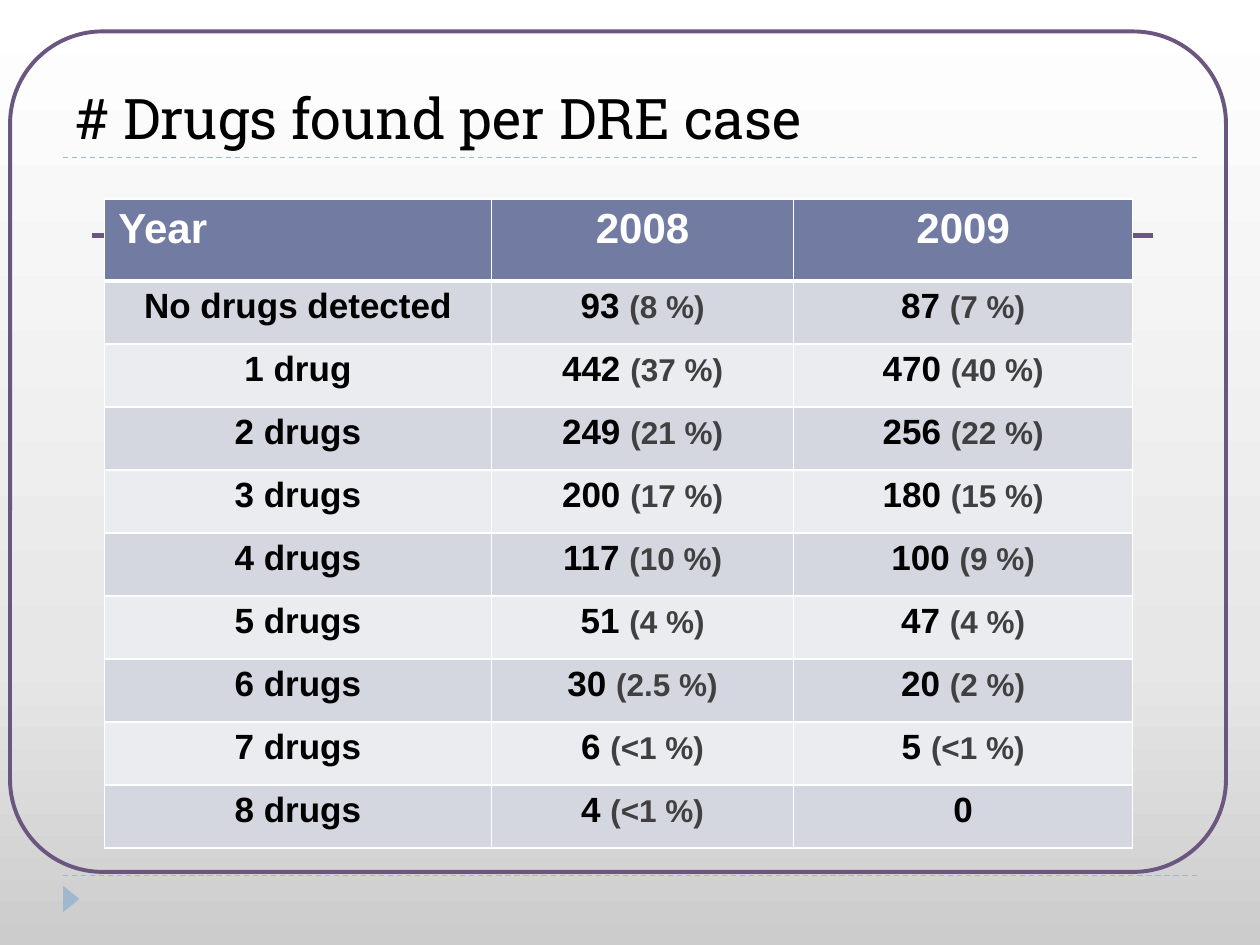
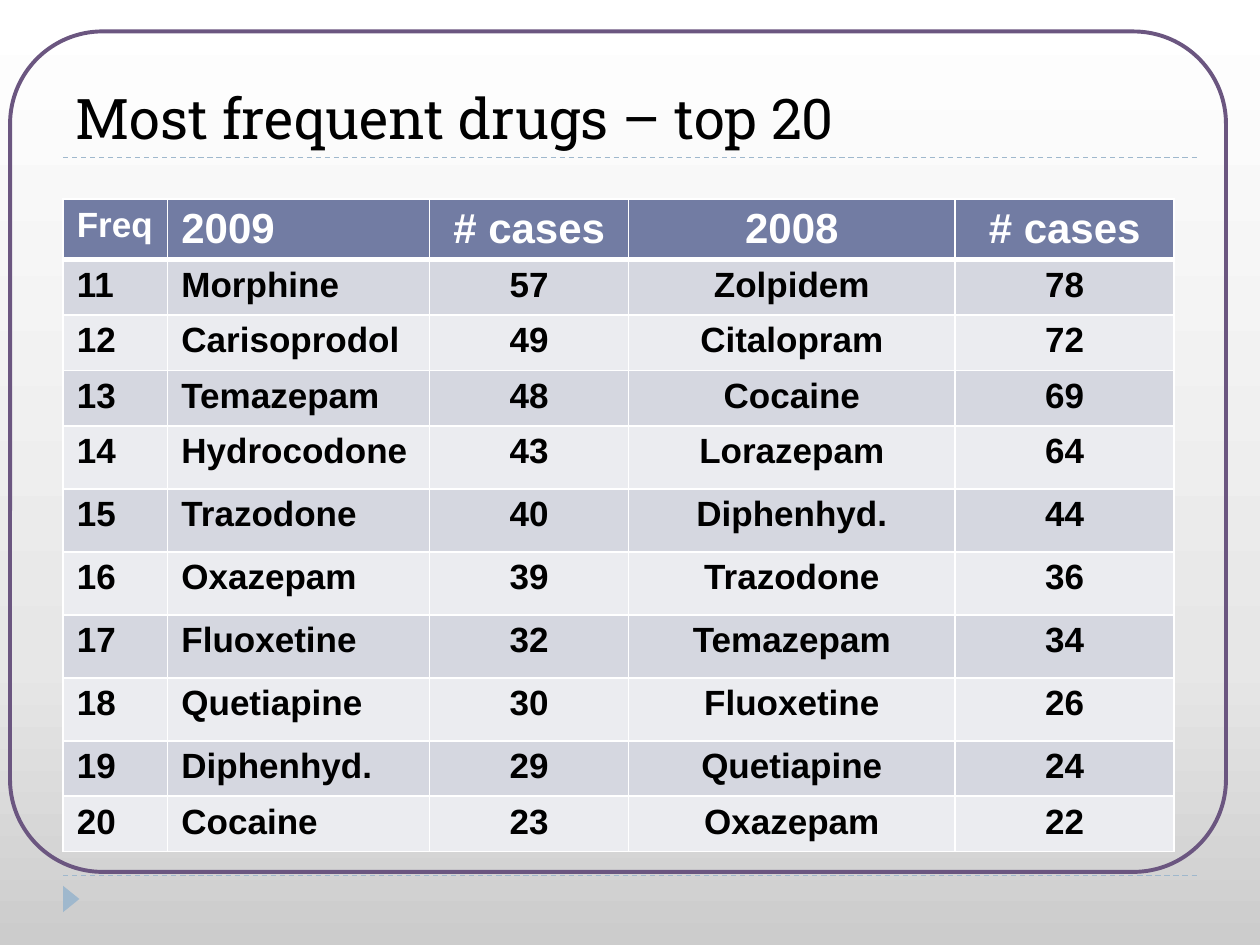
from dataclasses import dataclass

from lxml.etree import SubElement
from pptx import Presentation
from pptx.dml.color import RGBColor
from pptx.enum.dml import MSO_LINE
from pptx.enum.shapes import MSO_CONNECTOR, MSO_SHAPE
from pptx.enum.text import MSO_ANCHOR, PP_ALIGN
from pptx.oxml.ns import qn
from pptx.util import Inches, Pt


@dataclass(frozen=True)
class Theme:
    backdrop: tuple = ((0, "CCCCCC"), (30, "E7E7E7"), (100, "FFFFFF"))
    rule: str = "9FB8CD"
    frame: str = "6B5680"
    header: str = "727CA3"
    bands: tuple = ("D5D7E0", "EBECF0")
    white: str = "FFFFFF"
    text: str = "000000"
    muted: str = "404040"
    title_font: str = "Roboto Slab"
    body_font: str = "Arial"
    title_size: int = 32
    header_size: int = 24
    body_size: int = 20
    percent_size: int = 18


THEME = Theme()

DRUGS_PER_CASE = [
    ("Year", "2008", "2009"),
    ("No drugs detected", "93 (8 %)", "87 (7 %)"),
    ("1 drug", "442 (37 %)", "470 (40 %)"),
    ("2 drugs", "249 (21 %)", "256 (22 %)"),
    ("3 drugs", "200 (17 %)", "180 (15 %)"),
    ("4 drugs", "117 (10 %)", "100 (9 %)"),
    ("5 drugs", "51 (4 %)", "47 (4 %)"),
    ("6 drugs", "30 (2.5 %)", "20 (2 %)"),
    ("7 drugs", "6 (<1 %)", "5 (<1 %)"),
    ("8 drugs", "4 (<1 %)", "0"),
]

FREQUENT_DRUGS = [
    ("Freq", "2009", "# cases", "2008", "# cases"),
    ("11", "Morphine", "57", "Zolpidem", "78"),
    ("12", "Carisoprodol", "49", "Citalopram", "72"),
    ("13", "Temazepam", "48", "Cocaine", "69"),
    ("14", "Hydrocodone", "43", "Lorazepam", "64"),
    ("15", "Trazodone", "40", "Diphenhyd.", "44"),
    ("16", "Oxazepam", "39", "Trazodone", "36"),
    ("17", "Fluoxetine", "32", "Temazepam", "34"),
    ("18", "Quetiapine", "30", "Fluoxetine", "26"),
    ("19", "Diphenhyd.", "29", "Quetiapine", "24"),
    ("20", "Cocaine", "23", "Oxazepam", "22"),
]


def rgb(color):
    return RGBColor.from_string(color)


def style_run(r, font, size, color, bold=False):
    r.font.name = font
    r.font.size = Pt(size)
    r.font.bold = bold
    r.font.color.rgb = rgb(color)


def set_backdrop(master):
    """Give every slide the gradient that runs from grey below to white above."""
    fill = master.background.fill
    fill.gradient()
    fill.gradient_angle = 90
    stops = master.element.find(".//" + qn("a:gsLst"))
    stops.clear()
    for position, color in THEME.backdrop:
        stop = SubElement(stops, qn("a:gs"), pos=str(position * 1000))
        SubElement(stop, qn("a:srgbClr"), val=color)


def add_rule(slide, left, right, y, color, width, dash=None):
    line = slide.shapes.add_connector(
        MSO_CONNECTOR.STRAIGHT, Inches(left), Inches(y), Inches(right), Inches(y))
    line.line.color.rgb = rgb(color)
    line.line.width = Pt(width)
    line.line.dash_style = dash
    SubElement(line.element.spPr, qn("a:effectLst"))


def add_shape(slide, kind, left, top, width, height):
    sp = slide.shapes.add_shape(
        kind, Inches(left), Inches(top), Inches(width), Inches(height))
    sp.shadow.inherit = False
    return sp


def add_decoration(slide):
    for y in (6.95, 1.25):
        add_rule(slide, 0.5, 9.5, y, THEME.rule, 0.75, MSO_LINE.DASH)

    marker = add_shape(slide, MSO_SHAPE.ISOSCELES_TRIANGLE, 0.46, 7.07, 0.21, 0.13)
    marker.rotation = 90
    marker.fill.solid()
    marker.fill.fore_color.rgb = rgb(THEME.rule)
    marker.line.fill.background()

    frame = add_shape(slide, MSO_SHAPE.ROUNDED_RECTANGLE, 0.08, 0.25, 9.65, 6.67)
    frame.adjustments[0] = 0.11
    frame.fill.background()
    frame.line.color.rgb = rgb(THEME.frame)
    frame.line.width = Pt(2.25)
    add_rule(slide, 0.73, 9.15, 1.87, THEME.frame, 3)


def set_title(slide, text):
    title = slide.shapes.title
    title.left, title.top = Inches(0.5), Inches(0.17)
    title.width, title.height = Inches(9), Inches(1.08)
    tf = title.text_frame
    tf.text = text
    tf.vertical_anchor = MSO_ANCHOR.BOTTOM
    p = tf.paragraphs[0]
    p.alignment = PP_ALIGN.LEFT
    style_run(p.runs[0], THEME.title_font, THEME.title_size, THEME.text)


def add_slide(prs, title):
    slide = prs.slides.add_slide(prs.slide_layouts.get_by_name("Title Only"))
    add_decoration(slide)
    set_title(slide, title)
    return slide


def set_borders(cell, top, bottom):
    """Draw white borders; they must come before the fill in the cell's XML."""
    tc_pr = cell._tc.get_or_add_tcPr()
    widths = {"a:lnL": 1, "a:lnR": 1, "a:lnT": top, "a:lnB": bottom}
    for i, (tag, width) in enumerate(widths.items()):
        ln = SubElement(tc_pr, qn(tag), w=str(Pt(width)))
        fill = SubElement(ln, qn("a:solidFill"))
        SubElement(fill, qn("a:srgbClr"), val=THEME.white)
        tc_pr.insert(i, ln)


def fill_cell(cell, text, size, color, fill, left_aligned):
    """Write a bold value; a share in parentheses is smaller and muted."""
    cell.margin_left = cell.margin_right = Inches(0.11)
    cell.margin_top = cell.margin_bottom = Inches(0.05)
    cell.fill.solid()
    cell.fill.fore_color.rgb = rgb(fill)
    value, paren, share = text.partition("(")
    p = cell.text_frame.paragraphs[0]
    p.text = value
    p.alignment = PP_ALIGN.LEFT if left_aligned else PP_ALIGN.CENTER
    style_run(p.runs[0], THEME.body_font, size, color, bold=True)
    if paren:
        r = p.add_run()
        r.text = paren + share
        style_run(r, THEME.body_font, THEME.percent_size, THEME.muted, bold=True)


def add_data_table(slide, rows, left, widths, heights, header_left, body_left):
    """header_left and body_left count the leading columns aligned left."""
    table = slide.shapes.add_table(
        len(rows), len(widths), Inches(left), Inches(1.58),
        Inches(sum(widths)), Inches(sum(heights))).table
    for column, width in zip(table.columns, widths):
        column.width = Inches(width)
    for i, (values, height) in enumerate(zip(rows, heights)):
        table.rows[i].height = Inches(height)
        for j, text in enumerate(values):
            cell = table.cell(i, j)
            if i == 0:
                size = THEME.header_size if widths[j] >= 1 else THEME.body_size
                fill_cell(cell, text, size, THEME.white, THEME.header, j < header_left)
            else:
                fill_cell(cell, text, THEME.body_size, THEME.text,
                          THEME.bands[(i - 1) % 2], j < body_left)
            set_borders(cell, top=3 if i == 1 else 1, bottom=3 if i == 0 else 1)


def main():
    prs = Presentation()
    prs.slide_width, prs.slide_height = Inches(10), Inches(7.5)
    set_backdrop(prs.slide_master)

    slide = add_slide(prs, "# Drugs found per DRE case")
    add_data_table(slide, DRUGS_PER_CASE, 0.83, [3.07, 2.4, 2.69],
                   [0.65] + [0.5] * 9, header_left=1, body_left=0)

    slide = add_slide(prs, "Most frequent drugs – top 20")
    add_data_table(slide, FREQUENT_DRUGS, 0.5, [0.83, 2.08, 1.58, 2.59, 1.74],
                   [0.48] + [0.44] * 3 + [0.5] * 5 + [0.44] * 2,
                   header_left=2, body_left=2)

    prs.save("out.pptx")


if __name__ == "__main__":
    main()
